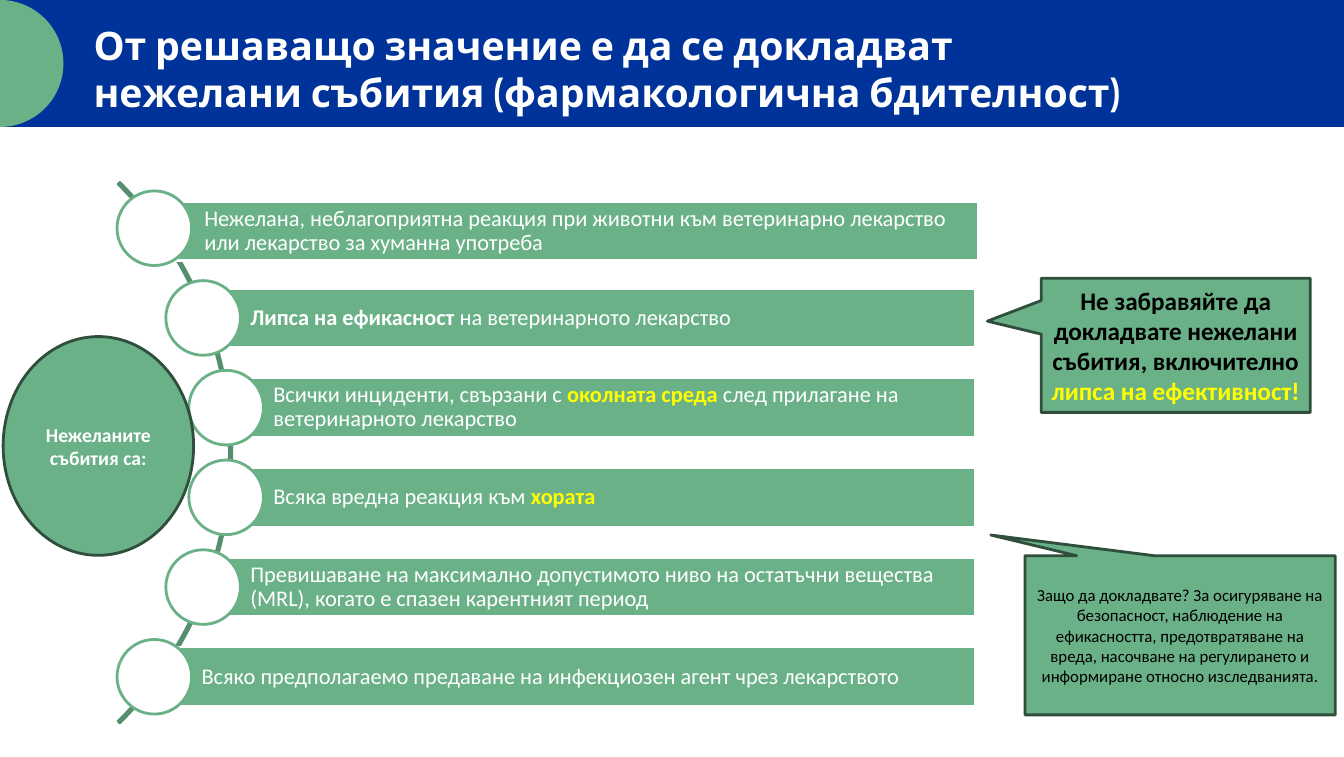
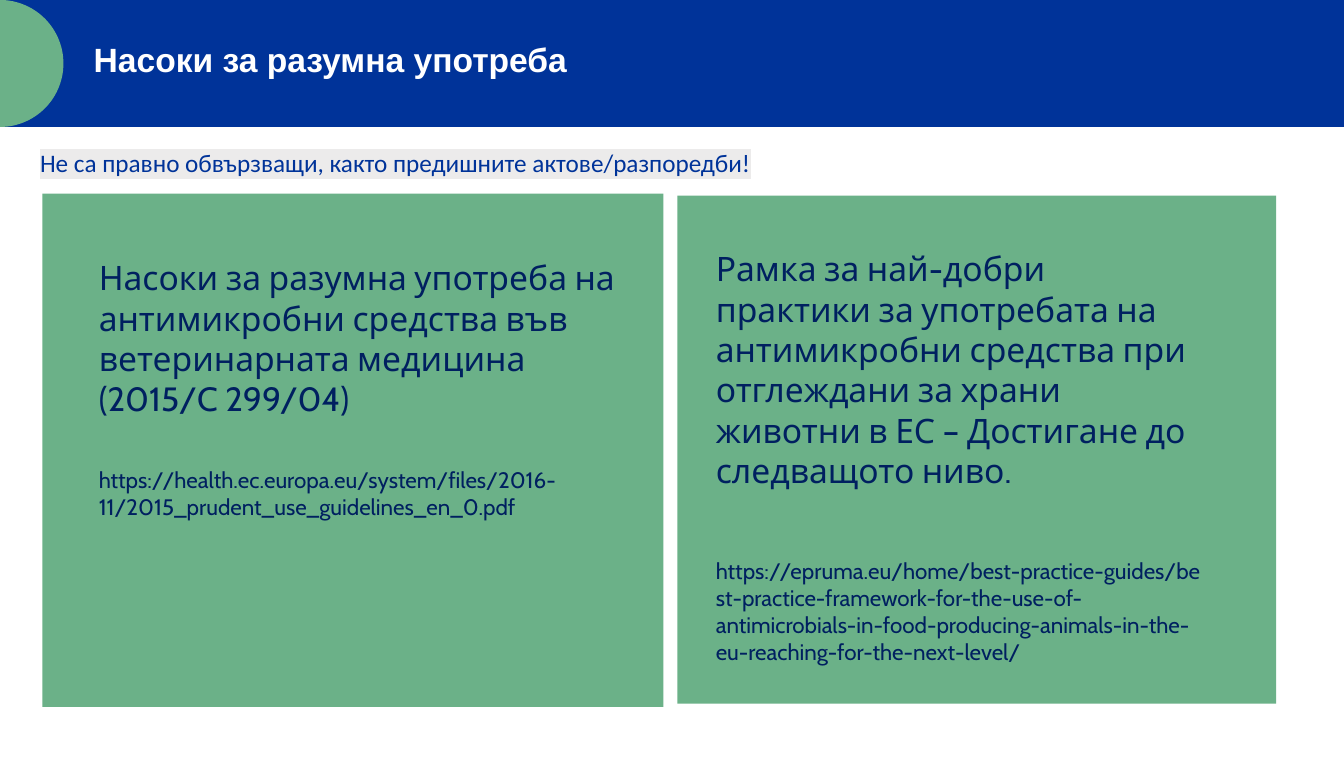
from math import cos, pi, sin

from lxml.etree import SubElement
from pptx import Presentation
from pptx.dml.color import RGBColor
from pptx.enum.shapes import MSO_SHAPE
from pptx.enum.text import MSO_ANCHOR, MSO_AUTO_SIZE, PP_ALIGN
from pptx.oxml.ns import qn
from pptx.util import Cm, Pt

BLUE, GREEN, DARK_GREEN, ARC_GREEN = "003399", "6BB188", "2F4E3C", "568F6E"
WHITE, BLACK, YELLOW, NAVY, GREY = "FFFFFF", "000000", "FFFF00", "002060", "ECEBEB"
WIDTH, HEIGHT, BAND = 33.87, 19.07, 3.2


def rgb(value):
    return RGBColor.from_string(value)


def add_run(p, text, size, font, color, bold=False):
    r = p.add_run()
    r.text = text
    r.font.size = Pt(size)
    r.font.name = font
    r.font.bold = bold
    r.font.color.rgb = rgb(color)
    return r


def style(sp, fill=None, line=None):
    sp.shadow.inherit = False
    if fill:
        sp.fill.solid()
        sp.fill.fore_color.rgb = rgb(fill)
    else:
        sp.fill.background()
    if line:
        sp.line.color.rgb = rgb(line)
        sp.line.width = Pt(2)
    else:
        sp.line.fill.background()


def add_box(s, kind, box, fill=None, line=None, adjustments=()):
    sp = s.shapes.add_shape(kind, *map(Cm, box))
    style(sp, fill, line)
    for i, value in enumerate(adjustments):
        sp.adjustments[i] = value
    return sp


def set_frame(tf, anchor, insets=(0.25, 0.13, 0.25, 0.13)):
    tf.word_wrap = True
    tf.auto_size = MSO_AUTO_SIZE.NONE
    tf.vertical_anchor = anchor
    tf.margin_left, tf.margin_top, tf.margin_right, tf.margin_bottom = map(Cm, insets)


def add_header(s):
    add_box(s, MSO_SHAPE.RECTANGLE, (0, 0, WIDTH, BAND), BLUE)
    radius, steps = Cm(BAND / 2), 60
    angles = [pi * i / steps - pi / 2 for i in range(1, steps + 1)]
    fb = s.shapes.build_freeform(0, 0)
    fb.add_line_segments([(radius * cos(a), radius + radius * sin(a)) for a in angles])
    style(fb.convert_to_shape(), GREEN)


def move_header_to_layout(s, layout):
    add_header(s)
    for i, sp in enumerate(list(s.shapes)[-2:]):
        sp.element.nvSpPr.cNvPr.set("id", str(20 + i))
        layout.shapes.element.insert(2 + i, sp.element)


def add_title(s, top, text, size, font):
    sp = s.shapes.title
    sp.left, sp.top, sp.width, sp.height = map(Cm, (2.11, top, 26.87, 1.32))
    set_frame(sp.text_frame, MSO_ANCHOR.TOP)
    p = sp.text_frame.paragraphs[0]
    p.alignment = PP_ALIGN.LEFT
    add_run(p, text, size, font, WHITE, True)


def add_centred(s, kind, box, runs, size, adjustments=()):
    sp = add_box(s, kind, box, GREEN, DARK_GREEN, adjustments)
    set_frame(sp.text_frame, MSO_ANCHOR.MIDDLE)
    p = sp.text_frame.paragraphs[0]
    p.alignment = PP_ALIGN.CENTER
    for text, color, bold in runs:
        add_run(p, text, size, "Calibri", color, bold)


def add_event_list(s, x, y, w, events):
    pitch, bar_height, circle = 2.26, 1.5, 1.88
    add_box(s, MSO_SHAPE.BLOCK_ARC, (x - 16.36, y - 3.03, 19.25, 19.25),
            None, ARC_GREEN, (189, 27, 0.003))
    for i, (offset, nudge, runs) in enumerate(events):
        left, top = x + offset, y + i * pitch
        bar = (left + circle / 2 + nudge, top + (circle - bar_height) / 2 + nudge,
               w - offset - circle / 2, bar_height)
        sp = add_box(s, MSO_SHAPE.RECTANGLE, bar, GREEN, WHITE)
        set_frame(sp.text_frame, MSO_ANCHOR.MIDDLE, (1.19, 0.1, 0.1, 0.1))
        p = sp.text_frame.paragraphs[0]
        p.alignment = PP_ALIGN.LEFT
        p.line_spacing = 0.9
        for text, color, bold in runs:
            add_run(p, text, 16, "Calibri", color, bold)
        add_box(s, MSO_SHAPE.OVAL, (left, top, circle, circle), WHITE, GREEN)


def add_guide_panel(s, box, insets, gap, heading, link):
    sp = add_box(s, MSO_SHAPE.RECTANGLE, box, GREEN)
    tf = sp.text_frame
    set_frame(tf, MSO_ANCHOR.TOP, insets)
    for p, text, size in ((tf.paragraphs[0], heading, 24), (tf.add_paragraph(), link, 16)):
        p.alignment = PP_ALIGN.LEFT
        add_run(p, text, size, "Cabin", NAVY)
    p.space_before = Pt(gap)


def add_note(s, box, text):
    tf = s.shapes.add_textbox(*map(Cm, box)).text_frame
    set_frame(tf, MSO_ANCHOR.TOP)
    r = add_run(tf.paragraphs[0], text, 18, "Calibri", BLUE)
    rPr = r.font._element
    highlight = SubElement(rPr, qn("a:highlight"))
    SubElement(highlight, qn("a:srgbClr")).set("val", GREY)
    rPr.find(qn("a:solidFill")).addnext(highlight)


def build_events_slide(s):
    add_title(s, 0.41, "От решаващо значение е да се докладват нежелани събития "
              "(фармакологична бдителност)", 28, "Cabin")
    add_centred(s, MSO_SHAPE.RECTANGULAR_CALLOUT, (26.24, 7.01, 6.78, 3.38), [
        ("Не забравяйте да докладвате нежелани събития, включително ", BLACK, True),
        ("липса на ефективност!", YELLOW, True)], 18, (-0.7, -0.18))
    add_centred(s, MSO_SHAPE.RECTANGULAR_CALLOUT, (25.83, 14, 7.82, 4.01), [
        ("Защо да докладвате? За осигуряване на безопасност, наблюдение на ефикасността, "
         "предотвратяване на вреда, насочване на регулирането и информиране относно "
         "изследванията.", BLACK, False)], 12, (-0.61, -0.63))
    add_event_list(s, 2.95, 4.81, 21.64, [
        (0, 0.07, [("Нежелана, неблагоприятна реакция при животни към ветеринарно лекарство "
                    "или лекарство за хуманна употреба", WHITE, False)]),
        (1.23, 0, [("Липса на ефикасност ", WHITE, True),
                   ("на ветеринарното лекарство", WHITE, False)]),
        (1.81, 0, [("Всички инциденти, свързани с ", WHITE, False),
                   ("околната среда", YELLOW, True),
                   (" след прилагане на ветеринарното лекарство", WHITE, False)]),
        (1.81, 0, [("Всяка вредна реакция към ", WHITE, False), ("хората", YELLOW, True)]),
        (1.23, 0, [("Превишаване на максимално допустимото ниво на остатъчни вещества (MRL), "
                    "когато е спазен карентният период", WHITE, False)]),
        (0, 0, [("Всяко предполагаемо предаване на инфекциозен агент чрез лекарството",
                 WHITE, False)]),
    ])
    add_centred(s, MSO_SHAPE.OVAL, (0.08, 8.48, 4.8, 5.51),
                [("Нежеланите събития са:", WHITE, True)], 14)


def build_guides_slide(s):
    add_title(s, 0.86, "Насоки за разумна употреба", 24, "Arial")
    add_guide_panel(
        s, (1.07, 4.88, 15.65, 12.93), (1.42, 1.6, 0.97, 0.13), 34,
        "Насоки за разумна употреба на антимикробни средства във ветеринарната медицина "
        "(2015/C 299/04)",
        "https://health.ec.europa.eu/system/files/2016-11/2015_prudent_use_guidelines_en_0.pdf")
    add_guide_panel(
        s, (17.07, 4.93, 15.09, 12.8), (0.97, 1.32, 1.73, 0.13), 29,
        "Рамка за най-добри практики за употребата на антимикробни средства при отглеждани "
        "за храни животни в ЕС – Достигане до следващото ниво.",
        " https://epruma.eu/home/best-practice-guides/best-practice-framework-for-the-use-of-"
        "antimicrobials-in-food-producing-animals-in-the-eu-reaching-for-the-next-level/")
    add_note(s, (0.76, 3.58, 24.43, 1.02),
             "Не са правно обвързващи, както предишните актове/разпоредби!")


def main():
    prs = Presentation()
    prs.slide_width, prs.slide_height = Cm(WIDTH), Cm(HEIGHT)
    layout = prs.slide_layouts[5]
    events, guides = (prs.slides.add_slide(layout) for _ in range(2))
    move_header_to_layout(events, layout)
    build_events_slide(events)
    build_guides_slide(guides)
    prs.save("out.pptx")


if __name__ == "__main__":
    main()
